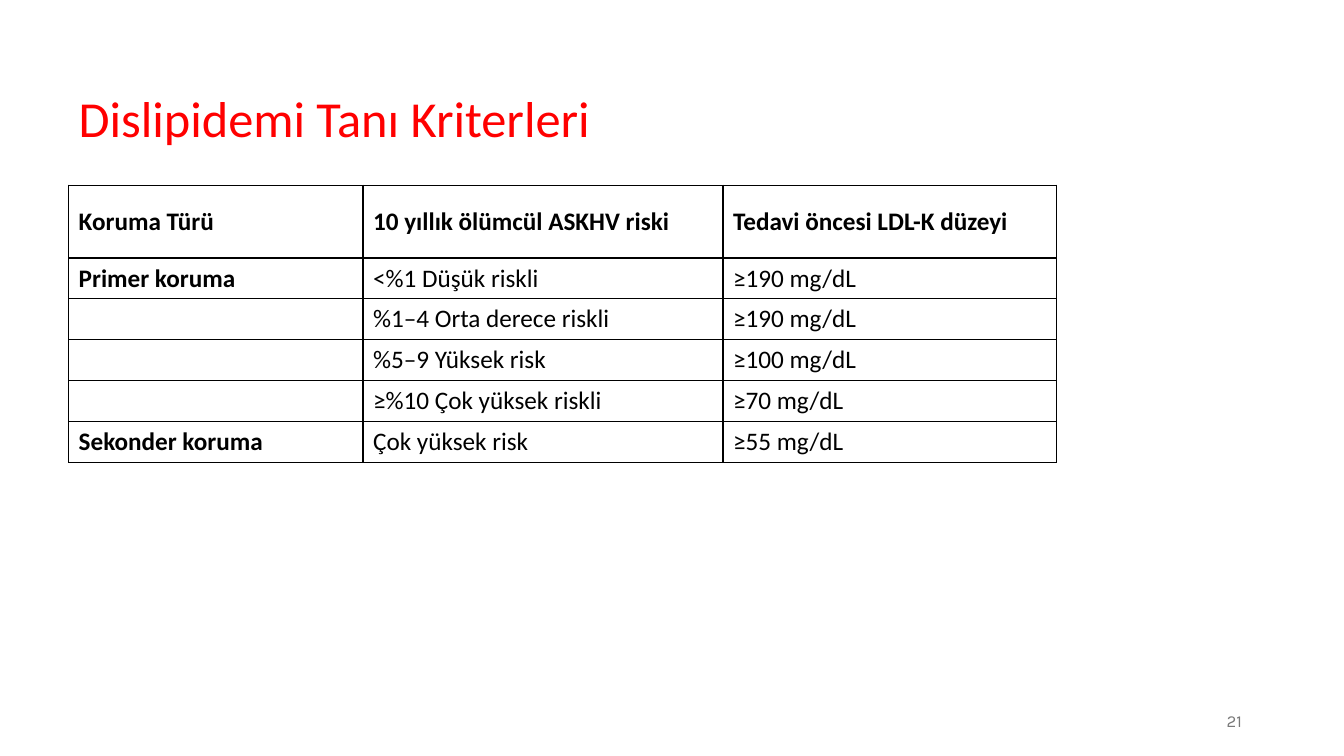
from lxml.etree import SubElement
from pptx import Presentation
from pptx.dml.color import RGBColor
from pptx.enum.text import MSO_ANCHOR as Anchor, PP_ALIGN as Align
from pptx.oxml.ns import qn
from pptx.util import Cm, Pt

RED = RGBColor(0xFF, 0x00, 0x00)
BLACK = RGBColor(0x00, 0x00, 0x00)
GRAY = RGBColor(0x79, 0x79, 0x79)

COLUMN_WIDTHS = [7.42, 9.07, 8.41]
HEADER_HEIGHT, ROW_HEIGHT = 1.83, 1.03
CRITERIA = [
    ("Koruma Türü", "10 yıllık ölümcül ASKHV riski", "Tedavi öncesi LDL-K düzeyi"),
    ("Primer koruma", "<%1 Düşük riskli", "≥190 mg/dL"),
    ("", "%1–4 Orta derece riskli", "≥190 mg/dL"),
    ("", "%5–9 Yüksek risk", "≥100 mg/dL"),
    ("", "≥%10 Çok yüksek riskli", "≥70 mg/dL"),
    ("Sekonder koruma", "Çok yüksek risk", "≥55 mg/dL"),
]


def style_runs(paragraph, font_name, size, color, bold=False):
    for run in paragraph.runs:
        run.font.name = font_name
        run.font.size = Pt(size)
        run.font.color.rgb = color
        run.font.bold = bold


def add_label(slide, box, text, font_name, size, color, align=Align.LEFT):
    frame = slide.shapes.add_textbox(*map(Cm, box)).text_frame
    frame.word_wrap = True
    frame.vertical_anchor = Anchor.MIDDLE
    frame.text = text
    paragraph = frame.paragraphs[0]
    paragraph.alignment = align
    style_runs(paragraph, font_name, size, color)
    return paragraph


def add_title(slide, box):
    title = add_label(slide, box, "Dislipidemi Tanı Kriterleri", "Calibri", 36, RED)
    title.line_spacing = 0.9


def add_page_number(slide, box):
    add_label(slide, box, "21", "Karla", 12, GRAY, Align.RIGHT)


def add_borders(cell):
    properties = cell._tc.get_or_add_tcPr()
    for side in ("a:lnL", "a:lnR", "a:lnT", "a:lnB"):
        border = SubElement(properties, qn(side), w=str(Pt(1)))
        fill = SubElement(border, qn("a:solidFill"))
        SubElement(fill, qn("a:srgbClr"), val=str(BLACK))


def add_criteria_table(slide, left, top):
    height = HEADER_HEIGHT + ROW_HEIGHT * (len(CRITERIA) - 1)
    table = slide.shapes.add_table(
        len(CRITERIA), len(COLUMN_WIDTHS),
        Cm(left), Cm(top), Cm(sum(COLUMN_WIDTHS)), Cm(height)).table
    for column, width in zip(table.columns, COLUMN_WIDTHS):
        column.width = Cm(width)

    for row_index, criterion in enumerate(CRITERIA):
        table.rows[row_index].height = Cm(ROW_HEIGHT if row_index else HEADER_HEIGHT)
        for column_index, text in enumerate(criterion):
            cell = table.cell(row_index, column_index)
            cell.text = text
            cell.vertical_anchor = Anchor.MIDDLE
            # Header row and first column are bold
            is_heading = row_index == 0 or column_index == 0
            style_runs(cell.text_frame.paragraphs[0], "Calibri", 18, BLACK, is_heading)
            # Borders precede the fill in the cell properties
            add_borders(cell)
            cell.fill.background()


def main():
    presentation = Presentation()
    presentation.slide_width = Cm(33.87)
    presentation.slide_height = Cm(19.05)
    slide = presentation.slides.add_slide(presentation.slide_layouts[6])

    add_title(slide, (1.73, 2.21, 28.52, 1.68))
    add_page_number(slide, (23.93, 17.65, 7.62, 1.02))
    add_criteria_table(slide, 1.73, 4.67)

    presentation.save("out.pptx")


if __name__ == "__main__":
    main()
